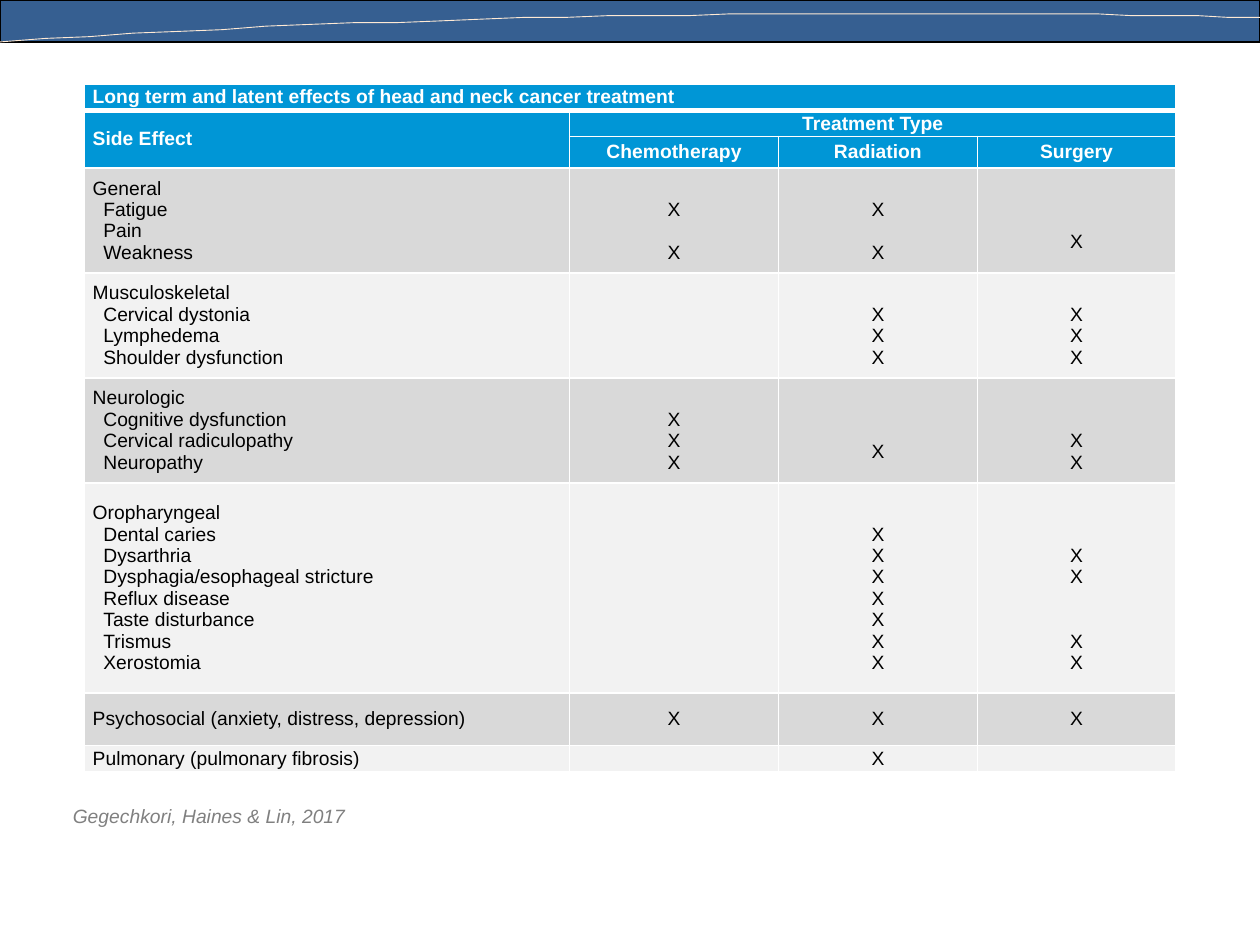
from lxml import etree
from pptx import Presentation
from pptx.dml.color import RGBColor
from pptx.enum.shapes import MSO_SHAPE
from pptx.enum.text import MSO_ANCHOR, PP_ALIGN
from pptx.oxml.ns import qn
from pptx.util import Pt

CENTER, LEFT, MIDDLE = PP_ALIGN.CENTER, PP_ALIGN.LEFT, MSO_ANCHOR.MIDDLE
RECTANGLE = MSO_SHAPE.RECTANGLE

# Content
TITLE = "Long term and latent effects of head and neck cancer treatment"
SIDE_EFFECT = "Side Effect"
TREATMENT_TYPE = "Treatment Type"
TREATMENTS = ["Chemotherapy", "Radiation", "Surgery"]
# Group, its effects, and one mark string per treatment ("." is a line without a mark)
GROUPS = [
    ("General", ["Fatigue", "Pain", "Weakness"], [".X.X", ".X.X", "..X"]),
    ("Musculoskeletal", ["Cervical dystonia", "Lymphedema", "Shoulder dysfunction"],
     ["", ".XXX", ".XXX"]),
    ("Neurologic", ["Cognitive dysfunction", "Cervical radiculopathy", "Neuropathy"],
     [".XXX", "..X", "..XX"]),
    ("Oropharyngeal",
     ["Dental caries", "Dysarthria", "Dysphagia/esophageal stricture", "Reflux disease",
      "Taste disturbance", "Trismus", "Xerostomia"],
     ["", ".XXXXXXX", "..XX..XX"]),
    ("Psychosocial (anxiety, distress, depression)", [], ["X", "X", "X"]),
    ("Pulmonary (pulmonary fibrosis)", [], ["", "X", ""]),
]
CITATION = "Gegechkori, Haines & Lin, 2017"

COLORS = {"band": "365F91", "black": "000000", "curve": "FFEAD5", "header": "0096D6",
          "dark row": "D9D9D9", "light row": "F2F2F2", "white": "FFFFFF", "gray": "808080"}
FONT, SIZE, LINE_HEIGHT, INDENT = "Arial", 11, 12.3, 6.1
COLUMN_WIDTHS = [277.5, 119.5, 113.5, 113.5]
ROW_HEIGHTS = [15, 15, 18, 60, 60, 60, 120, 30, 15]
CURVE = [(720, 10), (535.7, 5.8), (272.9, 5.8), (0, 23.8)]
CURVE_STEPS = 32


def rgb(name):
    return RGBColor.from_string(COLORS[name])


def add_run(paragraph, text, color, bold=False, italic=False):
    run = paragraph.add_run()
    run.text = text
    font = run.font
    font.name, font.size, font.bold, font.italic = FONT, Pt(SIZE), bold, italic
    font.color.rgb = rgb(color)


def set_borders(cell, bottom=1):
    properties = cell._tc.get_or_add_tcPr()
    for place, (side, width) in enumerate([("L", 1), ("R", 1), ("T", 1), ("B", bottom)]):
        line = etree.Element(qn(f"a:ln{side}"), w=str(Pt(width)))
        fill = etree.SubElement(line, qn("a:solidFill"))
        etree.SubElement(fill, qn("a:srgbClr"), val=COLORS["white"])
        properties.insert(place, line)


def fill_cell(cell, lines, color, align=LEFT, bold=False):
    """Write (text, indent, blank lines above) tuples; blanks on top become a margin."""
    for number, (text, indent, blanks) in enumerate(lines):
        paragraphs = cell.text_frame
        paragraph = paragraphs.add_paragraph() if number else paragraphs.paragraphs[0]
        paragraph.alignment = align
        if indent:
            paragraph._p.get_or_add_pPr().set("marL", str(Pt(indent)))
        if number and blanks:
            paragraph.space_before = Pt(blanks * LINE_HEIGHT)
        elif blanks:
            cell.margin_top = Pt(blanks * LINE_HEIGHT)
        add_run(paragraph, text, color, bold)


def mark_lines(marks):
    return [("X", 0, len(gap)) for gap in marks.split("X")[:-1]]


def curve_point(t):
    weights = [(1 - t) ** 3, 3 * t * (1 - t) ** 2, 3 * t * t * (1 - t), t ** 3]
    return tuple(sum(w * point[axis] for w, point in zip(weights, CURVE)) for axis in (0, 1))


prs = Presentation()
prs.slide_width, prs.slide_height = Pt(720), Pt(540)
slide = prs.slides.add_slide(prs.slide_layouts[6])

# Top band with its curve
band = slide.shapes.add_shape(RECTANGLE, 0, 0, Pt(720), Pt(24))
band.shadow.inherit = False
band.fill.solid()
band.fill.fore_color.rgb = rgb("band")
band.line.color.rgb = rgb("black")
band.line.width = Pt(0.75)

points = [curve_point(step / CURVE_STEPS) for step in range(CURVE_STEPS + 1)]
builder = slide.shapes.build_freeform(*points[0], scale=Pt(1))
builder.add_line_segments(points[1:], close=False)
curve = builder.convert_to_shape()
curve.shadow.inherit = False
curve.fill.background()
curve.line.color.rgb = rgb("curve")
curve.line.width = Pt(0.5)

# Citation
citation = slide.shapes.add_textbox(Pt(34.5), Pt(456), Pt(649.5), Pt(21)).text_frame
citation.word_wrap = True
add_run(citation.paragraphs[0], CITATION, "gray", italic=True)

# Table grid
table = slide.shapes.add_table(len(ROW_HEIGHTS), len(COLUMN_WIDTHS), Pt(48), Pt(48),
                               Pt(sum(COLUMN_WIDTHS)), Pt(sum(ROW_HEIGHTS))).table
table.first_row = table.horz_banding = False
for column, width in zip(table.columns, COLUMN_WIDTHS):
    column.width = Pt(width)
HEADER_ROWS = len(ROW_HEIGHTS) - len(GROUPS)
for r, height in enumerate(ROW_HEIGHTS):
    table.rows[r].height = Pt(height)
    row_color = "header" if r < HEADER_ROWS else ("light row", "dark row")[r % 2]
    for cell in table.rows[r].cells:
        cell.margin_left = cell.margin_right = Pt(5)
        cell.margin_top = cell.margin_bottom = 0
        cell.vertical_anchor = MIDDLE
        cell.fill.solid()
        cell.fill.fore_color.rgb = rgb(row_color)
        set_borders(cell, bottom=1 if r else 3)

# Header rows
table.cell(0, 0).merge(table.cell(0, 3))
table.cell(1, 0).merge(table.cell(2, 0))
table.cell(1, 1).merge(table.cell(1, 3))
headers = [(0, 0, TITLE, LEFT), (1, 0, SIDE_EFFECT, LEFT), (1, 1, TREATMENT_TYPE, CENTER)]
headers += [(2, c, name, CENTER) for c, name in enumerate(TREATMENTS, 1)]
for r, c, text, align in headers:
    fill_cell(table.cell(r, c), [(text, 0, 0)], "white", align, bold=True)

# Side effects and marks
for r, (group, effects, treatment_marks) in enumerate(GROUPS, HEADER_ROWS):
    names = [(group, 0, 0)] + [(effect, INDENT, 0) for effect in effects]
    fill_cell(table.cell(r, 0), names, "black")
    for c, marks in enumerate(treatment_marks, 1):
        fill_cell(table.cell(r, c), mark_lines(marks), "black", CENTER)

# Unfilled cells keep the small text size so that rows do not grow
for cell in table.iter_cells():
    if not cell.text_frame.text:
        etree.SubElement(cell.text_frame.paragraphs[0]._p, qn("a:endParaRPr"), sz=str(SIZE * 100))

prs.save("out.pptx")
